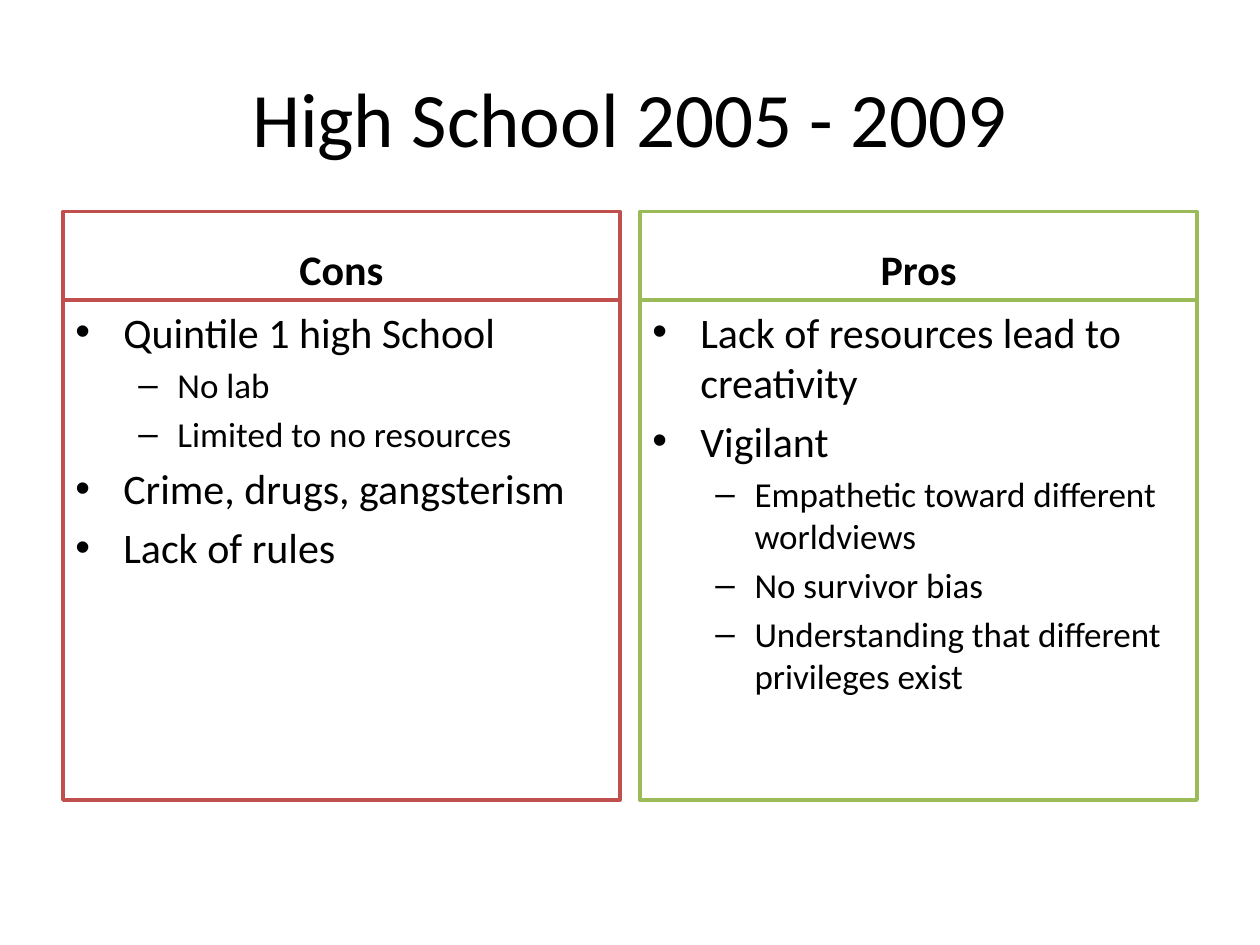
"""Build a slide that sets the cons and pros of high school side by side."""
from dataclasses import dataclass

from lxml import etree
from pptx import Presentation
from pptx import util as u
from pptx.dml.color import RGBColor
from pptx.enum import shapes, text
from pptx.oxml.ns import qn


@dataclass(frozen=True)
class Theme:
    font: str = "Calibri"
    ink: RGBColor = RGBColor(0x00, 0x00, 0x00)
    paper: RGBColor = RGBColor(0xFF, 0xFF, 0xFF)
    red: RGBColor = RGBColor(0xC0, 0x50, 0x4D)
    green: RGBColor = RGBColor(0x9B, 0xBB, 0x59)
    title_size: int = 44
    heading_size: int = 24
    border: int = 2
    space_ratio: float = 0.2


@dataclass(frozen=True)
class Level:
    bullet: str
    size: int
    margin: float
    hanging: float


@dataclass(frozen=True)
class Column:
    heading: str
    color: RGBColor
    items: list[tuple[int, str]]


THEME = Theme()
LEVELS = [Level("•", 24, 0.38, 0.38), Level("–", 20, 0.81, 0.31)]
MARGIN, COLUMN_WIDTH, GAP = 0.5, 4.42, 0.16
HEADING_TOP, HEADING_HEIGHT, BODY_HEIGHT = 1.68, 0.7, 3.97
COLUMNS = [
    Column("Cons", THEME.red, [
        (0, "Quintile 1 high School"),
        (1, "No lab"),
        (1, "Limited to no resources"),
        (0, "Crime, drugs, gangsterism"),
        (0, "Lack of rules"),
    ]),
    Column("Pros", THEME.green, [
        (0, "Lack of resources lead to creativity"),
        (0, "Vigilant"),
        (1, "Empathetic toward different worldviews"),
        (1, "No survivor bias"),
        (1, "Understanding that different privileges exist"),
    ]),
]


def style(paragraph, size: int, align, bold: bool = False) -> None:
    paragraph.alignment = align
    paragraph.font.name = THEME.font
    paragraph.font.size = u.Pt(size)
    paragraph.font.bold = bold
    paragraph.font.color.rgb = THEME.ink


def add_title(slide, wording: str) -> None:
    box = slide.shapes.add_textbox(u.Inches(MARGIN), u.Inches(0.3), u.Inches(9), u.Inches(1.25))
    frame = box.text_frame
    frame.word_wrap = True
    frame.vertical_anchor = text.MSO_ANCHOR.MIDDLE
    frame.text = wording
    style(frame.paragraphs[0], THEME.title_size, text.PP_ALIGN.CENTER)


def add_panel(slide, left: float, top: float, height: float, color: RGBColor, anchor):
    shape = slide.shapes.add_shape(
        shapes.MSO_SHAPE.RECTANGLE,
        u.Inches(left), u.Inches(top), u.Inches(COLUMN_WIDTH), u.Inches(height),
    )
    shape.shadow.inherit = False
    shape.fill.solid()
    shape.fill.fore_color.rgb = THEME.paper
    shape.line.color.rgb = color
    shape.line.width = u.Pt(THEME.border)
    shape.text_frame.word_wrap = True
    shape.text_frame.vertical_anchor = anchor
    return shape.text_frame


def add_bullet(paragraph, level: Level) -> None:
    properties = paragraph._p.get_or_add_pPr()
    properties.set("marL", str(u.Inches(level.margin)))
    properties.set("indent", str(-u.Inches(level.hanging)))
    etree.SubElement(properties, qn("a:buFont"), typeface="Arial")
    etree.SubElement(properties, qn("a:buChar"), char=level.bullet)


def add_column(slide, column: Column, left: float) -> None:
    heading = add_panel(slide, left, HEADING_TOP, HEADING_HEIGHT, column.color, text.MSO_ANCHOR.BOTTOM)
    heading.text = column.heading
    style(heading.paragraphs[0], THEME.heading_size, text.PP_ALIGN.CENTER, bold=True)

    body = add_panel(slide, left, HEADING_TOP + HEADING_HEIGHT, BODY_HEIGHT, column.color, text.MSO_ANCHOR.TOP)
    for index, (depth, wording) in enumerate(column.items):
        level = LEVELS[depth]
        paragraph = body.add_paragraph() if index else body.paragraphs[0]
        paragraph.text = wording
        paragraph.level = depth
        add_bullet(paragraph, level)
        style(paragraph, level.size, text.PP_ALIGN.LEFT)
        if index:
            paragraph.space_before = u.Pt(level.size * THEME.space_ratio)


def main() -> None:
    presentation = Presentation()
    presentation.slide_width, presentation.slide_height = u.Inches(10), u.Inches(7.5)
    slide = presentation.slides.add_slide(presentation.slide_layouts[6])
    add_title(slide, "High School 2005 - 2009")
    for index, column in enumerate(COLUMNS):
        add_column(slide, column, MARGIN + index * (COLUMN_WIDTH + GAP))
    presentation.save("out.pptx")


if __name__ == "__main__":
    main()
